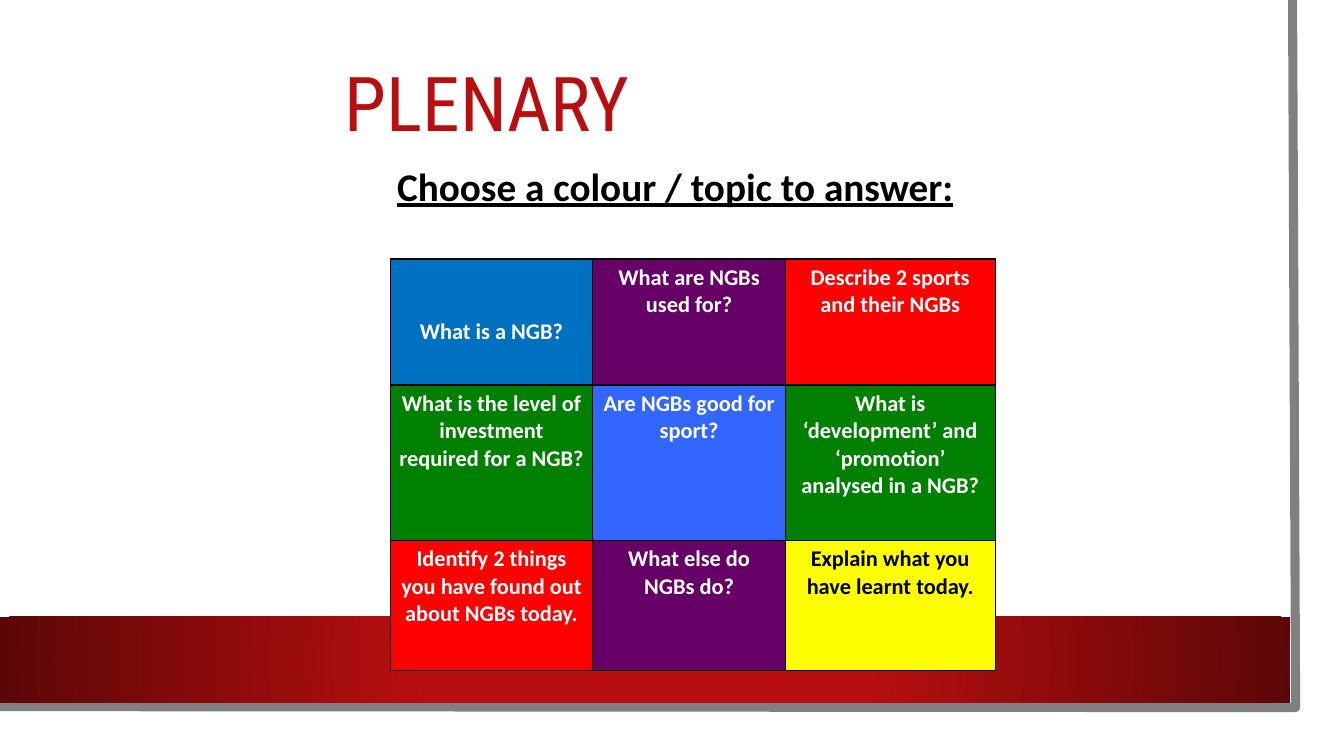
from lxml.etree import SubElement
from pptx import Presentation
from pptx.dml.color import RGBColor
from pptx.enum.shapes import MSO_SHAPE
from pptx.enum.text import MSO_ANCHOR, PP_ALIGN
from pptx.oxml import parse_xml
from pptx.oxml.ns import nsdecls, qn
from pptx.util import Emu, Pt

PX = 9144  # 100 px to the inch
RED, DARK_RED, GREY = "B80E0F", "5C0707", "808080"
WHITE, BLACK = "FFFFFF", "000000"
CELL_MARGIN = 8

# Question, cell fill, text colour, top margin
QUESTIONS = [
    [("What is a NGB?", "0070C0", WHITE, 59),
     ("What are NGBs used for?", "660066", WHITE, 5),
     ("Describe 2 sports and their NGBs", "FF0000", WHITE, 5)],
    [("What is the level of investment required for a NGB?", "008000", WHITE, 5),
     ("Are NGBs good for sport?", "3366FF", WHITE, 5),
     ("What is ‘development’ and ‘promotion’ analysed in a NGB?", "008000", WHITE, 5)],
    [("Identify 2 things you have found out about NGBs today.", "FF0000", WHITE, 5),
     ("What else do NGBs do?", "660066", WHITE, 5),
     ("Explain what you have learnt today.", "FFFF00", BLACK, 5)],
]
COLUMN_WIDTHS = [201, 191, 208]
ROW_HEIGHTS = [125, 154, 129]


def px(length):
    return Emu(length * PX)


def color(value):
    return RGBColor.from_string(value)


def style(paragraph, font_name, size, text_color, bold=False, underline=False):
    font = paragraph.font
    font.name, font.size = font_name, Pt(size)
    font.bold, font.underline = bold, underline
    font.color.rgb = color(text_color)


def add_text(slide, text, left, top, width, height, anchor):
    box = slide.shapes.add_textbox(px(left), px(top), px(width), px(height))
    frame = box.text_frame
    frame.word_wrap = True
    frame.vertical_anchor = anchor
    paragraph = frame.paragraphs[0]
    paragraph.text = text
    return paragraph


def add_page_edge(slide, left, top, width, height):
    """Grey line down the right side and along the bottom."""
    builder = slide.shapes.build_freeform(left + width - 3, top, scale=PX)
    builder.add_line_segments(
        [(left + width, top + height), (left, top + height - 1)], close=False)
    edge = builder.convert_to_shape()
    edge.shadow.inherit = False
    edge.fill.background()
    edge.line.color.rgb = color(GREY)
    edge.line.width = Pt(6.5)


def add_band(slide, left, top, width, height):
    """Red band that darkens away from its centre."""
    band = slide.shapes.add_shape(
        MSO_SHAPE.RECTANGLE, px(left), px(top), px(width), px(height))
    band.shadow.inherit = False
    band.line.fill.background()
    gradient = parse_xml(
        f'<a:gradFill {nsdecls("a")} rotWithShape="1"><a:gsLst>'
        f'<a:gs pos="34000"><a:srgbClr val="{RED}"/></a:gs>'
        f'<a:gs pos="100000"><a:srgbClr val="{DARK_RED}"/></a:gs></a:gsLst>'
        '<a:path path="circle"><a:fillToRect l="50000" t="50000" r="50000" b="50000"/>'
        '</a:path></a:gradFill>')
    band.element.spPr.find(qn("a:prstGeom")).addnext(gradient)


def add_headings(slide, left, top):
    title = add_text(slide, "PLENARY", left + 92, top, 406, 99, MSO_ANCHOR.MIDDLE)
    title.line_spacing = 0.9
    style(title, "Roboto Condensed", 54, RED)

    prompt = add_text(slide, "Choose a colour / topic to answer:",
                      left, top + 99, 859, 57, MSO_ANCHOR.TOP)
    prompt.alignment = PP_ALIGN.CENTER
    style(prompt, "Calibri", 28, BLACK, bold=True, underline=True)


def add_borders(cell):
    properties = cell._tc.get_or_add_tcPr()
    for side in ("a:lnL", "a:lnR", "a:lnT", "a:lnB"):
        border = SubElement(properties, qn(side), w=str(Pt(1)))
        fill = SubElement(border, qn("a:solidFill"))
        SubElement(fill, qn("a:srgbClr"), val=BLACK)


def add_question_grid(slide, left, top):
    table = slide.shapes.add_table(
        len(ROW_HEIGHTS), len(COLUMN_WIDTHS), px(left), px(top),
        px(sum(COLUMN_WIDTHS)), px(sum(ROW_HEIGHTS))).table
    table.first_row = table.horz_banding = False
    for column, width in zip(table.columns, COLUMN_WIDTHS):
        column.width = px(width)
    for row, height, questions in zip(table.rows, ROW_HEIGHTS, QUESTIONS):
        row.height = px(height)
        for cell, (question, fill, text_color, top_margin) in zip(row.cells, questions):
            add_borders(cell)
            cell.fill.solid()
            cell.fill.fore_color.rgb = color(fill)
            cell.margin_left = cell.margin_right = px(CELL_MARGIN)
            cell.margin_top = px(top_margin)
            paragraph = cell.text_frame.paragraphs[0]
            paragraph.text = question
            paragraph.alignment = PP_ALIGN.CENTER
            style(paragraph, "Calibri", 16, text_color, bold=True)


def main():
    presentation = Presentation()
    presentation.slide_width, presentation.slide_height = px(1333), px(750)
    slide = presentation.slides.add_slide(presentation.slide_layouts[6])
    add_page_edge(slide, -3, 0, 1288, 702)
    add_band(slide, 0, 612, 1280, 85)
    add_headings(slide, 240, 57)
    add_question_grid(slide, 387, 257)
    presentation.save("out.pptx")


if __name__ == "__main__":
    main()
